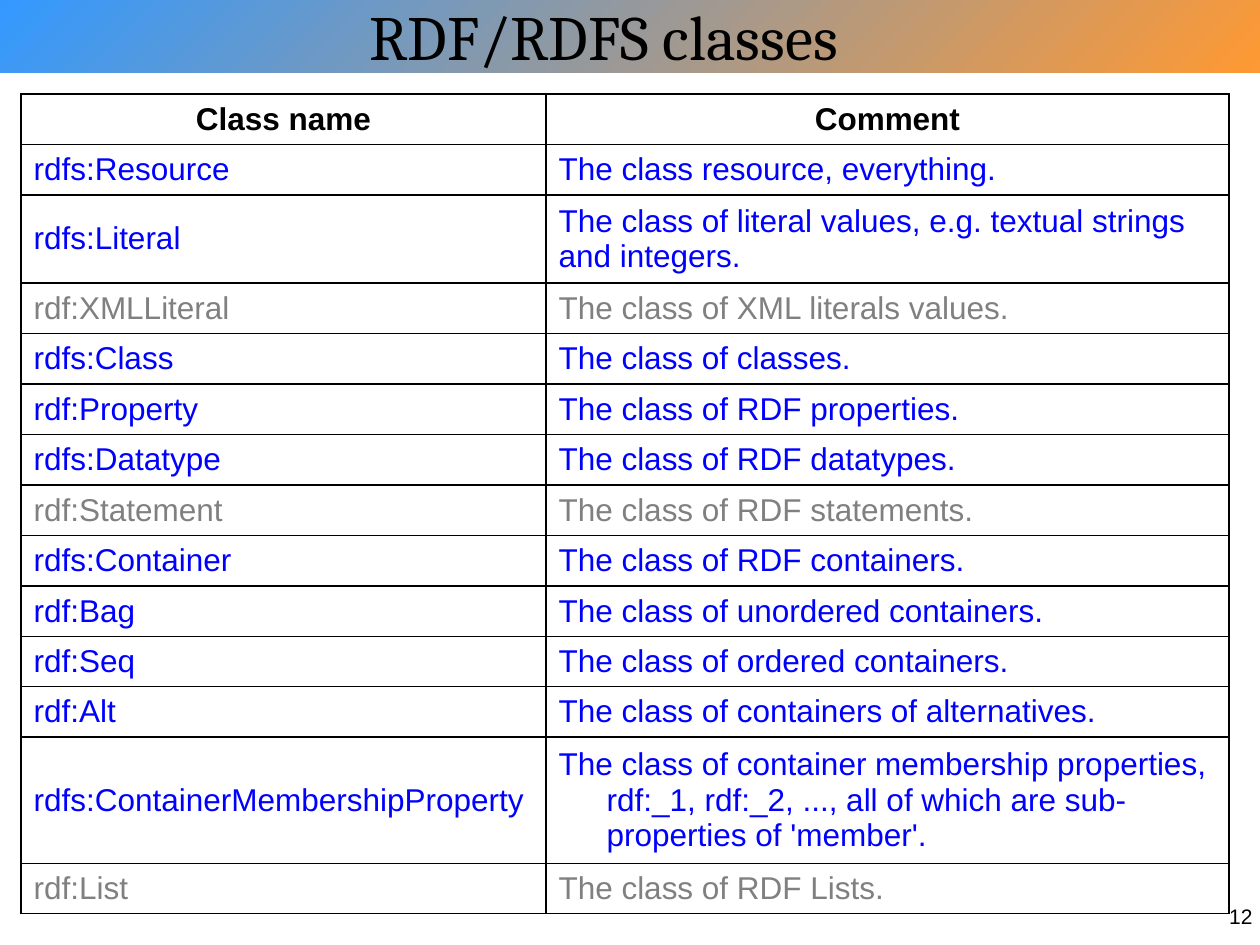
from dataclasses import dataclass

from lxml.etree import SubElement
from pptx import Presentation
from pptx.dml.color import RGBColor as RGB
from pptx.enum.shapes import MSO_SHAPE as Shape
from pptx.enum.text import MSO_ANCHOR as Anchor, PP_ALIGN as Align
from pptx.oxml.ns import qn
from pptx.util import Emu, Pt

# Content
TITLE = " RDF/RDFS classes"
PAGE_NUMBER = "12"
HEADINGS = ("Class name", "Comment")
CLASSES = [
    ("rdfs:Resource", "The class resource, everything."),
    ("rdfs:Literal", "The class of literal values, e.g. textual strings and integers."),
    ("rdf:XMLLiteral", "The class of XML literals values."),
    ("rdfs:Class", "The class of classes."),
    ("rdf:Property", "The class of RDF properties."),
    ("rdfs:Datatype", "The class of RDF datatypes."),
    ("rdf:Statement", "The class of RDF statements."),
    ("rdfs:Container", "The class of RDF containers."),
    ("rdf:Bag", "The class of unordered containers."),
    ("rdf:Seq", "The class of ordered containers."),
    ("rdf:Alt", "The class of containers of alternatives."),
    ("rdfs:ContainerMembershipProperty",
     "The class of container membership properties, rdf:_1, rdf:_2, ..., "
     "all of which are sub-properties of 'member'."),
    ("rdf:List", "The class of RDF Lists."),
]
MUTED = {"rdf:XMLLiteral", "rdf:Statement", "rdf:List"}
FLUSH = {"rdfs:Literal"}  # comment wraps without a hanging indent

# Layout in px
PX = 914400 // 126
SLIDE = (1260, 945)
BANNER = (0, 0, 1260, 73)
TITLE_BOX = (343, -9, 575, 88)
PAGE_BOX = (1212, 897, 53, 50)
TABLE_AT = (21, 94)
COLUMNS = (525, 683)
ROW = 50
TALL_ROWS = {"rdfs:Literal": 88, "rdfs:ContainerMembershipProperty": 126}
HANG = 48


@dataclass(frozen=True)
class Theme:
    ink: str = "000000"
    active: str = "0000FF"
    muted: str = "808080"
    banner: tuple = ("3399FF", "FF9933")
    title_font: str = "Cambria"
    body_font: str = "Arial"
    title_size: int = 36
    body_size: int = 18
    page_size: int = 12
    border: int = 1


THEME = Theme()


def px(*lengths):
    return [Emu(length * PX) for length in lengths]


def write(frame, text, size, font=THEME.body_font, color=THEME.ink,
          bold=False, align=Align.LEFT):
    paragraph = frame.paragraphs[0]
    paragraph.alignment = align
    run = paragraph.add_run()
    run.text = text
    for key, value in {"size": Pt(size), "name": font, "bold": bold}.items():
        setattr(run.font, key, value)
    run.font.color.rgb = RGB.from_string(color)
    return paragraph


def add_text(slide, box, text, size, anchor=Anchor.TOP, **style):
    frame = slide.shapes.add_textbox(*px(*box)).text_frame
    frame.word_wrap = True
    frame.vertical_anchor = anchor
    write(frame, text, size, **style)


def add_borders(cell):
    properties = cell._tc.get_or_add_tcPr()
    for side in ("a:lnL", "a:lnR", "a:lnT", "a:lnB"):
        line = SubElement(properties, qn(side), w=str(Pt(THEME.border)))
        fill = SubElement(line, qn("a:solidFill"))
        SubElement(fill, qn("a:srgbClr"), val=THEME.ink)


def fill_cell(cell, text, hanging=True, **style):
    add_borders(cell)
    cell.fill.background()
    cell.vertical_anchor = Anchor.MIDDLE
    paragraph = write(cell.text_frame, text, THEME.body_size, **style)
    if hanging:
        indents = paragraph._p.get_or_add_pPr()
        indents.set("marL", str(HANG * PX))
        indents.set("indent", str(-HANG * PX))


def add_banner(slide):
    banner = slide.shapes.add_shape(Shape.RECTANGLE, *px(*BANNER))
    banner.shadow.inherit = False
    banner.line.fill.background()
    banner.fill.gradient()
    banner.fill.gradient_angle = 315
    for position, (stop, color) in enumerate(zip(banner.fill.gradient_stops, THEME.banner)):
        stop.position = position
        stop.color.rgb = RGB.from_string(color)


def add_class_table(slide):
    heights = [ROW] + [TALL_ROWS.get(name, ROW) for name, _ in CLASSES]
    table = slide.shapes.add_table(
        len(heights), len(COLUMNS), *px(*TABLE_AT, sum(COLUMNS), sum(heights))).table
    table.first_row = table.horz_banding = False
    for column, width in zip(table.columns, px(*COLUMNS)):
        column.width = width
    for row, height in zip(table.rows, px(*heights)):
        row.height = height

    for cell, heading in zip(table.rows[0].cells, HEADINGS):
        fill_cell(cell, heading, bold=True, align=Align.CENTER)
    for r, (name, comment) in enumerate(CLASSES, 1):
        color = THEME.muted if name in MUTED else THEME.active
        fill_cell(table.cell(r, 0), name, color=color)
        fill_cell(table.cell(r, 1), comment, hanging=name not in FLUSH, color=color)


def main():
    deck = Presentation()
    deck.slide_width, deck.slide_height = px(*SLIDE)
    slide = deck.slides.add_slide(deck.slide_layouts[6])
    add_banner(slide)
    add_text(slide, TITLE_BOX, TITLE, THEME.title_size, Anchor.MIDDLE,
             font=THEME.title_font)
    add_class_table(slide)
    add_text(slide, PAGE_BOX, PAGE_NUMBER, THEME.page_size, align=Align.RIGHT)
    deck.save("out.pptx")


if __name__ == "__main__":
    main()
